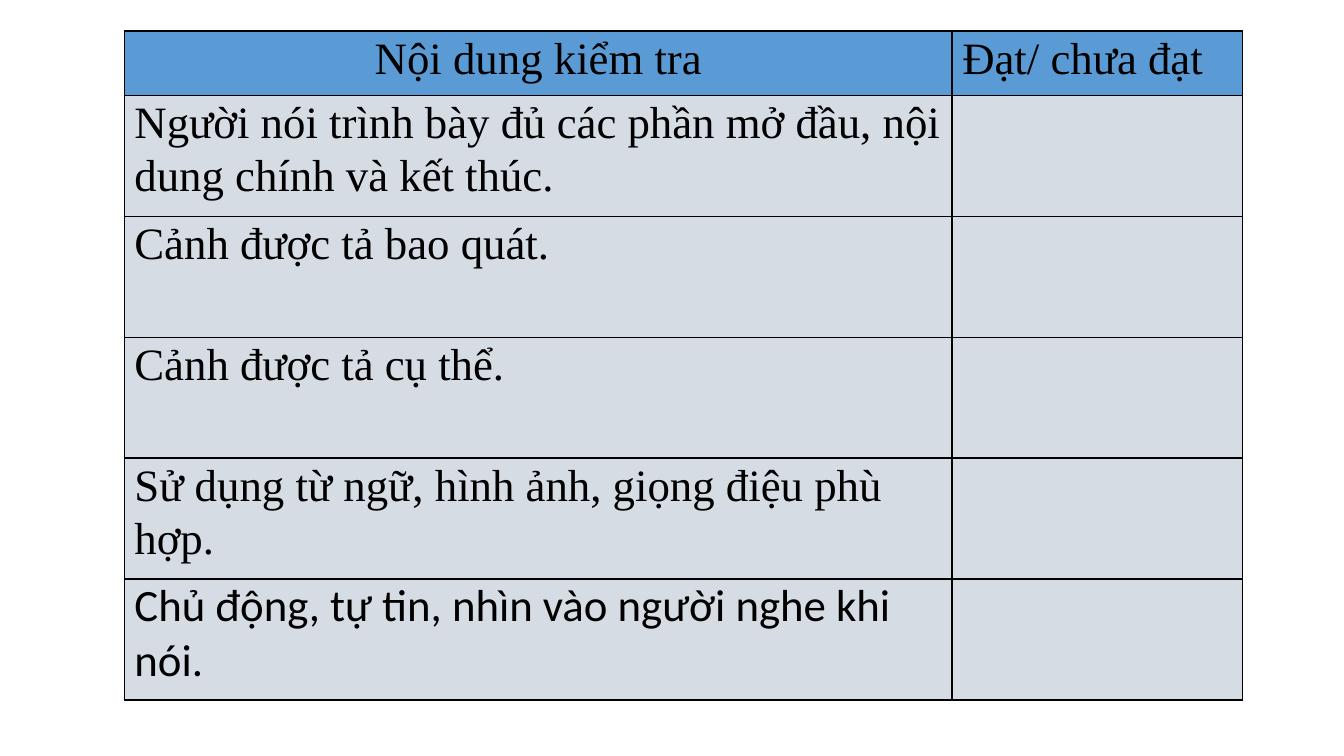
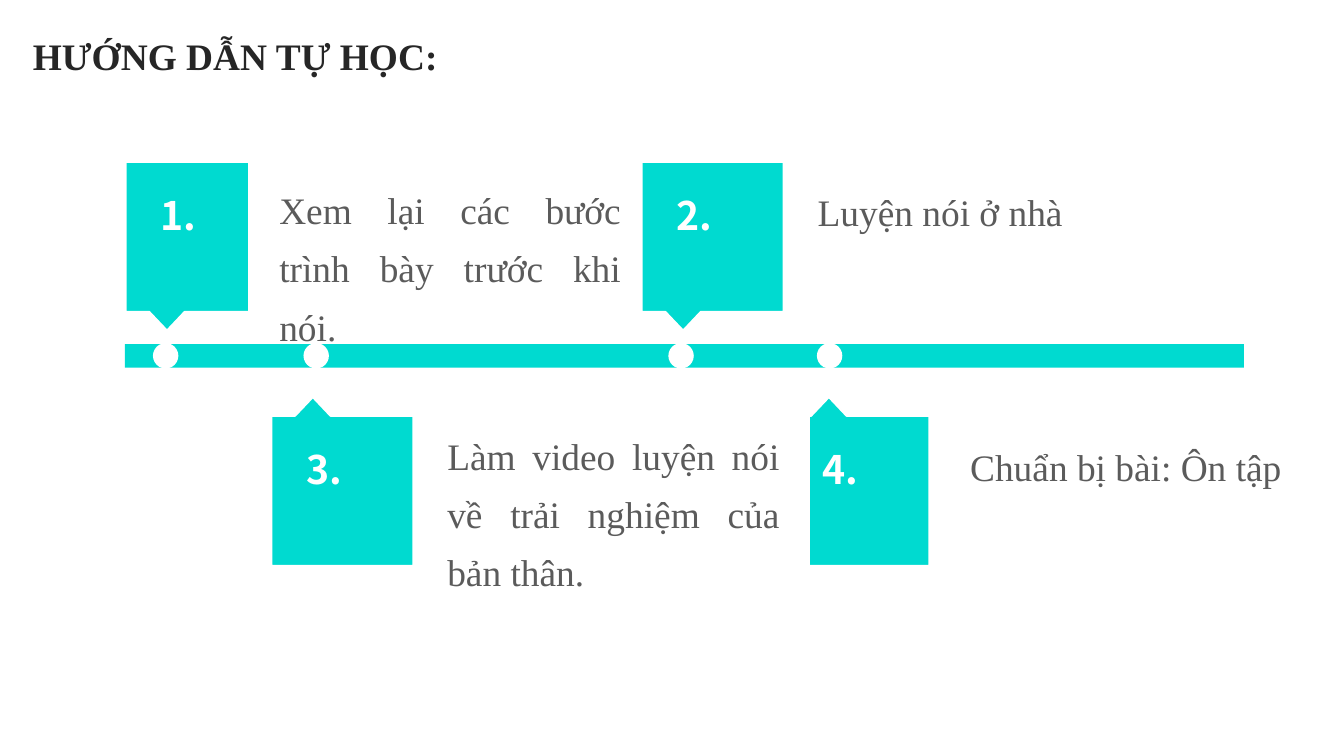
from pptx import Presentation
from pptx.dml.color import RGBColor
from pptx.enum.shapes import MSO_SHAPE as Preset
from pptx.enum.text import MSO_AUTO_SIZE as AutoSize, PP_ALIGN as Align
from pptx.oxml import parse_xml
from pptx.oxml.ns import nsdecls
from pptx.util import Pt

# Shared style
PX = 4572  # EMU per px, 200 px to the inch
BLACK = RGBColor(0x00, 0x00, 0x00)
WHITE = RGBColor(0xFF, 0xFF, 0xFF)
HEADER_BLUE = RGBColor(0x5B, 0x9B, 0xD5)
ROW_GRAY = RGBColor(0xD5, 0xDC, 0xE4)
TEAL = RGBColor(0x00, 0xDA, 0xD0)
TITLE_INK = RGBColor(0x26, 0x26, 0x26)
BODY_INK = RGBColor(0x5B, 0x5B, 0x5B)
SERIF = "Times New Roman"
SANS = "Calibri"
NUMBER_FONT = "Noto Sans CJK SC"


def px(*lengths):
    return [length * PX for length in lengths]


def write_text(frame, text, *, size, color, font=SERIF, bold=False,
               align=None, spacing=None):
    paragraph = frame.paragraphs[0]
    paragraph.alignment = align
    paragraph.line_spacing = spacing
    run = paragraph.add_run()
    run.text = text
    run.font.name = font
    run.font.size = Pt(size)
    run.font.bold = bold
    run.font.color.rgb = color


class Deck:
    def __init__(self, width, height):
        self.presentation = Presentation()
        self.presentation.slide_width, self.presentation.slide_height = px(width, height)
        self.slide = None

    def new_slide(self):
        self.slide = self.presentation.slides.add_slide(self.presentation.slide_layouts[6])

    def shape(self, preset, box, fill, line=None, adjustments=()):
        shape = self.slide.shapes.add_shape(preset, *px(*box))
        shape.shadow.inherit = False
        shape.fill.solid()
        shape.fill.fore_color.rgb = fill
        if line is None:
            shape.line.fill.background()
        else:
            shape.line.color.rgb = line
            shape.line.width = Pt(1)
        for index, value in enumerate(adjustments):
            shape.adjustments[index] = value

    def text(self, box, text, insets=(20, 10), **style):
        frame = self.slide.shapes.add_textbox(*px(*box)).text_frame
        frame.word_wrap = True
        frame.auto_size = AutoSize.SHAPE_TO_FIT_TEXT
        frame.margin_left = frame.margin_right = insets[0] * PX
        frame.margin_top = frame.margin_bottom = insets[1] * PX
        write_text(frame, text, **style)

    def table(self, left, top, widths, heights):
        box = px(left, top, sum(widths), sum(heights))
        table = self.slide.shapes.add_table(len(heights), len(widths), *box).table
        table.first_row = table.horz_banding = False
        for column, width in zip(table.columns, widths):
            column.width = width * PX
        for row, height in zip(table.rows, heights):
            row.height = height * PX
        return table

    def cell(self, cell, fill, text="", **style):
        cell.margin_left = cell.margin_right = 15 * PX
        cell.margin_top = cell.margin_bottom = 0
        properties = cell._tc.get_or_add_tcPr()
        for side in "LRTB":
            properties.append(parse_xml(
                f'<a:ln{side} {nsdecls("a")} w="{Pt(1)}"><a:solidFill>'
                f'<a:srgbClr val="{BLACK}"/></a:solidFill></a:ln{side}>'))
        cell.fill.solid()
        cell.fill.fore_color.rgb = fill
        if text:
            write_text(cell.text_frame, text, size=24, color=BLACK, **style)


def build_checklist(deck):
    deck.new_slide()
    criteria = [
        "Người nói trình bày đủ các phần mở đầu, nội dung chính và kết thúc.",
        "Cảnh được tả bao quát.",
        "Cảnh được tả cụ thể.",
        "Sử dụng từ ngữ, hình ảnh, giọng điệu phù hợp.",
        "Chủ động, tự tin, nhìn vào người nghe khi nói.",
    ]
    table = deck.table(185, 46, [1232, 432], [96] + [180] * len(criteria))
    deck.cell(table.cell(0, 0), HEADER_BLUE, "Nội dung kiểm tra",
              align=Align.CENTER, spacing=1.07)
    deck.cell(table.cell(0, 1), HEADER_BLUE, "Đạt/ chưa đạt", spacing=1.07)
    for row, criterion in enumerate(criteria, 1):
        is_last = row == len(criteria)
        deck.cell(table.cell(row, 0), ROW_GRAY, criterion,
                  font=SANS if is_last else SERIF,
                  spacing=None if is_last else 1.07)
        deck.cell(table.cell(row, 1), ROW_GRAY)


def build_timeline(deck):
    deck.new_slide()
    bar_top, bar_height = 512, 35
    deck.shape(Preset.RECTANGLE, (186, bar_top, 1665, bar_height), TEAL)

    # Numbered callouts: the upper row points down, the lower row up
    callouts = [("1.", 187, 241, 1), ("2.", 955, 241, 1),
                ("4.", 1172, 619, -1), ("3.", 404, 619, -1)]
    for number, left, top, direction in callouts:
        deck.shape(Preset.RECTANGULAR_CALLOUT, (left, top, 211, 223), TEAL, WHITE,
                   (-0.208, 0.625 * direction))
        deck.text((left + 32, top + 34, 94, 90), number,
                  size=21, color=WHITE, font=NUMBER_FONT, bold=True)

    # Step descriptions: white panel, then its text
    steps = [
        ((370, 241, 584), (396, 249, 548, 282), "Xem lại các bước trình bày trước khi nói."),
        ((1184, 241, 444), (1197, 252, 418, 108), "Luyện nói ở nhà"),
        ((636, 619, 568), (646, 614, 534, 282),
         "Làm video luyện nói về trải nghiệm của bản thân."),
        ((1408, 614, 560), (1424, 631, 528, 108), "Chuẩn bị bài: Ôn tập"),
    ]
    for panel, text_box, description in steps:
        deck.shape(Preset.RECTANGLE, (*panel, 223), WHITE, WHITE)
        deck.text(text_box, description, size=20, color=BODY_INK,
                  align=Align.JUSTIFY, spacing=1.3)

    # Stops on the bar
    for left in (229, 453, 996, 1217):
        deck.shape(Preset.OVAL, (left, bar_top, bar_height, bar_height), WHITE, WHITE)

    # Title
    deck.text((34, 43, 768, 84), "HƯỚNG DẪN TỰ HỌC:", insets=(15, 7),
              size=20, color=TITLE_INK, bold=True)


def main():
    deck = Deck(2000, 1125)
    build_checklist(deck)
    build_timeline(deck)
    deck.presentation.save("out.pptx")


if __name__ == "__main__":
    main()
